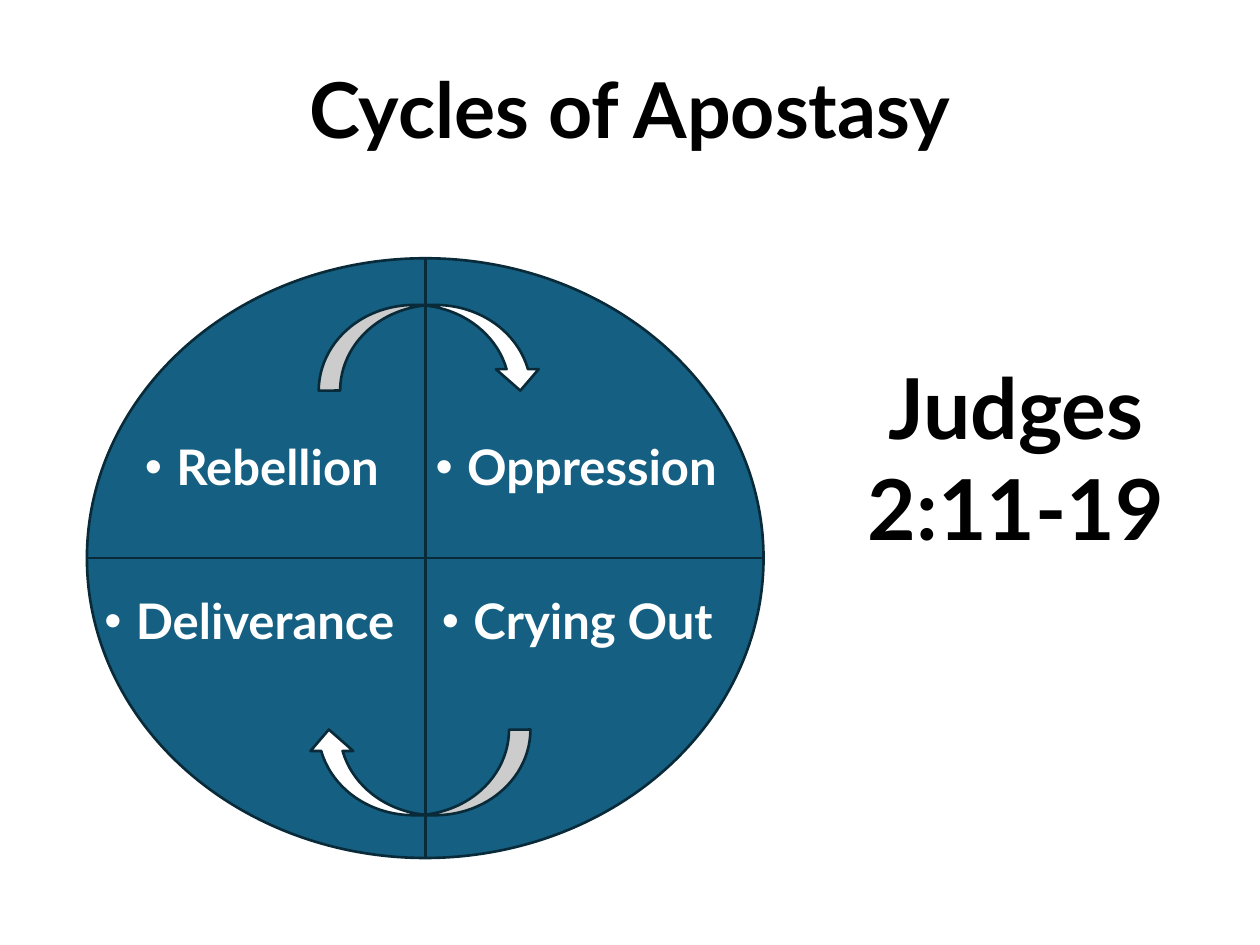
from lxml import etree
from pptx import Presentation
from pptx.dml.color import RGBColor
from pptx.enum import shapes, text
from pptx.oxml import ns
from pptx.util import Inches, Pt

TEAL = RGBColor(0x15, 0x60, 0x82)
DARK_TEAL = RGBColor(0x09, 0x2A, 0x39)
BLACK = RGBColor(0, 0, 0)
WHITE = RGBColor(0xFF, 0xFF, 0xFF)

TITLE_BOX = (0.69, 0.4, 8.62, 1)
WHEEL_BOX = (0.69, 2.05, 5.37, 4.76)
REFERENCE_BOX = (6.63, 2.77, 2.87, 1.72)

# Stage boxes and arrows are offset from the wheel's top left corner.
FIRST_STAGE = ("Rebellion", (0.36, 1.42, 2.66, 3.29))
OTHER_STAGES = [
    ("Oppression", (2.67, 1.42, 2.66, 2.72)),
    ("Crying Out", (2.72, 2.64, 2.66, 1.69)),
    ("Deliverance", (0.04, 2.64, 2.66, 2.07)),
]
ARROWS = [((1.84, 0.37, 1.77, 0.68), 0), ((1.75, 3.74, 1.77, 0.68), 180)]


def inch_box(box):
    return [Inches(length) for length in box]


def within(outer, inner):
    return (outer[0] + inner[0], outer[1] + inner[1], *inner[2:])


def place(shape, box):
    for name, length in zip(("left", "top", "width", "height"), inch_box(box)):
        setattr(shape, name, length)


def write(shape, wording, size, color, anchor=text.MSO_ANCHOR.TOP, **paragraph_format):
    """Put one bold paragraph in the shape and return that paragraph."""
    frame = shape.text_frame
    frame.text = wording
    frame_format = {
        "word_wrap": True,
        "auto_size": text.MSO_AUTO_SIZE.NONE,
        "vertical_anchor": anchor,
    }
    for name, value in frame_format.items():
        setattr(frame, name, value)
    paragraph = frame.paragraphs[0]
    for name, value in paragraph_format.items():
        setattr(paragraph, name, value)
    font = paragraph.runs[0].font
    for name, value in {"name": "Lato", "size": Pt(size), "bold": True}.items():
        setattr(font, name, value)
    font.color.rgb = color
    return paragraph


def add_bullet(paragraph):
    properties = paragraph._p.get_or_add_pPr()
    properties.set("marL", str(Inches(0.25)))
    properties.set("indent", str(Inches(-0.25)))
    etree.SubElement(properties, ns.qn("a:buFont"), typeface="Arial")
    etree.SubElement(properties, ns.qn("a:buChar"), char="•")


def write_stage(shape, wording):
    add_bullet(write(shape, wording, 28, WHITE, alignment=text.PP_ALIGN.LEFT,
                     line_spacing=0.9, space_before=Pt(10)))


def add_outlined_shape(slide, kind, box, fill):
    shape = slide.shapes.add_shape(kind, *inch_box(box))
    shape.shadow.inherit = False
    shape.fill.solid()
    shape.fill.fore_color.rgb = fill
    shape.line.color.rgb = DARK_TEAL
    shape.line.width = Pt(1.5)
    return shape


def fill_title(slide, box):
    title = slide.shapes.title
    place(title, box)
    write(title, "Cycles of Apostasy", 44, BLACK, text.MSO_ANCHOR.MIDDLE,
          alignment=text.PP_ALIGN.CENTER, line_spacing=0.9)


def add_reference(slide, box):
    reference = slide.shapes.add_textbox(*inch_box(box))
    write(reference, "Judges 2:11-19", 48, BLACK, alignment=text.PP_ALIGN.CENTER)


def add_cycle(slide, box):
    """Draw the quartered wheel with a stage in each quarter and two arrows."""
    wheel = add_outlined_shape(slide, shapes.MSO_SHAPE.FLOWCHART_OR, box, TEAL)
    body = slide.placeholders[1]
    body.element.addprevious(wheel.element)  # the wheel lies behind the list

    wording, stage_box = FIRST_STAGE
    place(body, within(box, stage_box))
    write_stage(body, wording)
    for wording, stage_box in OTHER_STAGES:
        stage = slide.shapes.add_textbox(*inch_box(within(box, stage_box)))
        write_stage(stage, wording)

    for arrow_box, rotation in ARROWS:
        arrow = add_outlined_shape(slide, shapes.MSO_SHAPE.CURVED_DOWN_ARROW,
                                   within(box, arrow_box), WHITE)
        arrow.rotation = rotation


def main():
    presentation = Presentation()
    presentation.slide_width = Inches(10)
    presentation.slide_height = Inches(7.5)
    slide = presentation.slides.add_slide(presentation.slide_layouts[1])
    fill_title(slide, TITLE_BOX)
    add_cycle(slide, WHEEL_BOX)
    add_reference(slide, REFERENCE_BOX)
    presentation.save("out.pptx")


if __name__ == "__main__":
    main()
